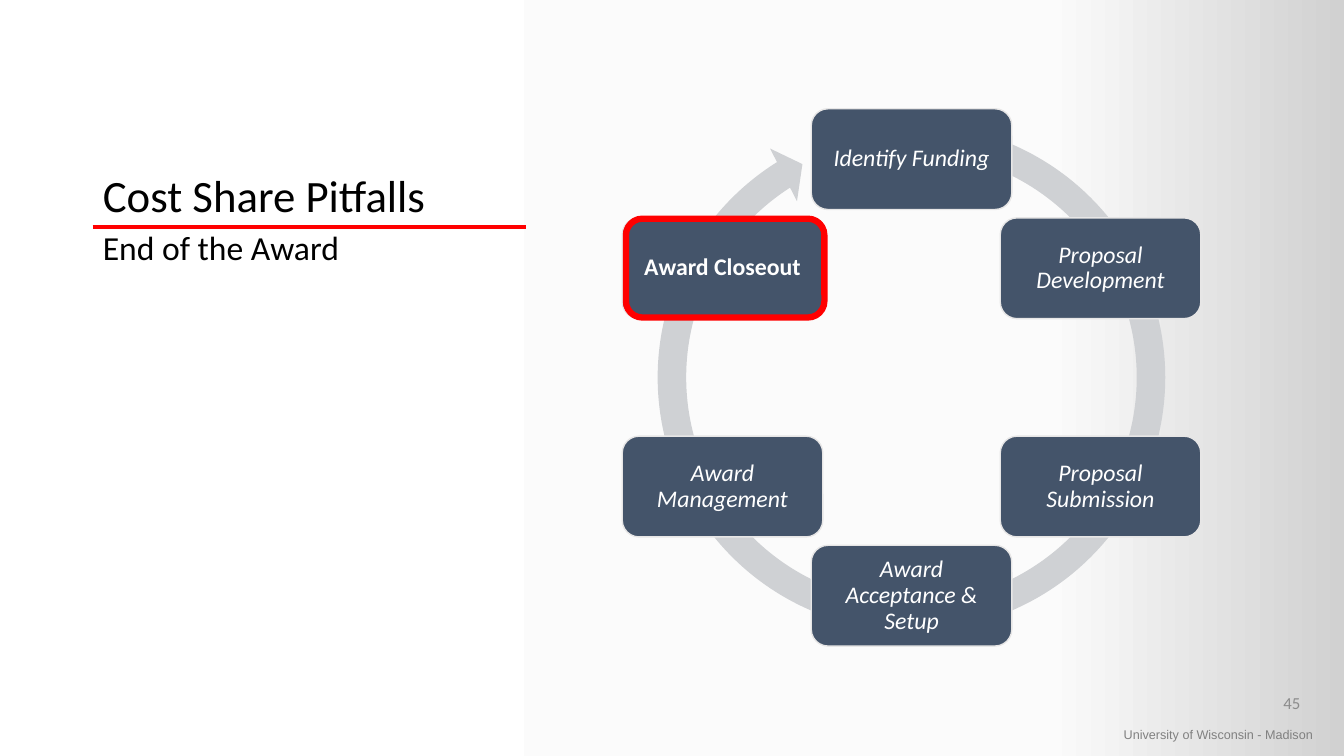
from copy import deepcopy
from math import cos, radians, sin

from pptx import Presentation
from pptx.dml.color import RGBColor
from pptx.enum.shapes import MSO_CONNECTOR, MSO_SHAPE
from pptx.enum.text import MSO_ANCHOR, MSO_AUTO_SIZE, PP_ALIGN
from pptx.oxml.ns import qn
from pptx.util import Pt

LEFT, CENTER, RIGHT = PP_ALIGN.LEFT, PP_ALIGN.CENTER, PP_ALIGN.RIGHT
TOP, MIDDLE, BOTTOM = MSO_ANCHOR.TOP, MSO_ANCHOR.MIDDLE, MSO_ANCHOR.BOTTOM
ROUNDED, RING = MSO_SHAPE.ROUNDED_RECTANGLE, MSO_SHAPE.CIRCULAR_ARROW

BLACK = RGBColor(0x00, 0x00, 0x00)
WHITE = RGBColor(0xFF, 0xFF, 0xFF)
RED = RGBColor(0xFF, 0x00, 0x00)
SLATE = RGBColor(0x44, 0x54, 0x6A)
CARD_EDGE = RGBColor(0xE7, 0xE6, 0xE6)
RING_GRAY = RGBColor(0xCF, 0xD1, 0xD4)
NUMBER_GRAY = RGBColor(0x8C, 0x8C, 0x8C)
FOOTER_GRAY = RGBColor(0x80, 0x80, 0x80)

# Content
TITLE = "Cost Share Pitfalls"
SUBTITLE = "End of the Award"
STAGES = [  # clockwise from the top
    "Identify Funding",
    "Proposal Development",
    "Proposal Submission",
    "Award Acceptance & Setup",
    "Award Management",
    "Award Closeout",
]
CURRENT_STAGE = "Award Closeout"
PAGE_NUMBER = "45"
FOOTER = "University of Wisconsin - Madison"
BACKGROUND = [(0, WHITE), (0.78, RGBColor(0xFB, 0xFB, 0xFB)),
              (1, RGBColor(0xD1, 0xD1, 0xD1))]

# Layout in points
SLIDE_W, SLIDE_H = 960, 540
TEXT_LEFT, TEXT_W, RULE_Y = 66.25, 309.5, 162
CYCLE_X, CYCLE_Y, CYCLE_RADIUS = 651.1, 269.6, 155.9
CARD_W, CARD_H, CARD_INSET = 143.3, 72, 8.6
RING_SIZE = 384.5
RING_ADJUSTMENTS = [0.053, 3.126, 142.629, 171.067, 0.055]


def write(shape, text, size, color, align=LEFT, anchor=TOP, font="Calibri",
          spacing=None, italic=False, bold=False):
    frame = shape.text_frame
    frame.word_wrap = True
    frame.auto_size = MSO_AUTO_SIZE.NONE
    frame.vertical_anchor = anchor
    para = frame.paragraphs[0]
    para.alignment = align
    para.space_before = Pt(0)
    if spacing:
        para.line_spacing = spacing
    span = para.add_run()
    span.text = text
    span.font.name, span.font.size = font, Pt(size)
    span.font.italic, span.font.bold = italic, bold
    span.font.color.rgb = color
    return para


def add_shape(kind, left, top, width, height, fill=None, edge=None, weight=1):
    shape = page.shapes.add_shape(kind, Pt(left), Pt(top), Pt(width), Pt(height))
    shape.shadow.inherit = False
    if fill is None:
        shape.fill.background()
    else:
        shape.fill.solid()
        shape.fill.fore_color.rgb = fill
    if edge is None:
        shape.line.fill.background()
    else:
        shape.line.color.rgb = edge
        shape.line.width = Pt(weight)
    return shape


def place(shape, left, top, width, height):
    shape.left, shape.top = Pt(left), Pt(top)
    shape.width, shape.height = Pt(width), Pt(height)


deck = Presentation()
deck.slide_width, deck.slide_height = Pt(SLIDE_W), Pt(SLIDE_H)
page = deck.slides.add_slide(deck.slide_layouts[1])

# Background gradient with a middle stop
fill = page.background.fill
fill.gradient()
fill.gradient_angle = 0
stop_list = next(page.element.iter(qn("a:gsLst")))
stop_list.insert(1, deepcopy(stop_list[0]))
for stop, (position, color) in zip(fill.gradient_stops, BACKGROUND):
    stop.position = position
    stop.color.rgb = color

# Title, rule and subtitle
rule = page.shapes.add_connector(MSO_CONNECTOR.STRAIGHT, Pt(TEXT_LEFT), Pt(RULE_Y),
                                 Pt(TEXT_LEFT + TEXT_W), Pt(RULE_Y))
rule.line.color.rgb = RED
rule.line.width = Pt(3)
properties = rule.element.spPr
properties.append(properties.makeelement(qn("a:effectLst"), {}))

title = page.shapes.title
place(title, TEXT_LEFT, 36, TEXT_W, RULE_Y - 36)
write(title, TITLE, 32, BLACK, anchor=BOTTOM, spacing=0.9)

body = page.placeholders[1]
place(body, TEXT_LEFT, RULE_Y, TEXT_W, 300)
para = write(body, SUBTITLE, 24, BLACK, spacing=0.9)
settings = para._p.get_or_add_pPr()
settings.set("marL", "0")
settings.set("indent", "0")
settings.append(settings.makeelement(qn("a:buNone"), {}))

# Ring arrow behind the award stages
ring = add_shape(RING, CYCLE_X - RING_SIZE / 2, CYCLE_Y - RING_SIZE / 2,
                 RING_SIZE, RING_SIZE, RING_GRAY)
for index, value in enumerate(RING_ADJUSTMENTS):
    ring.adjustments[index] = value

# Stage cards, evenly spaced around the ring
for index, stage in enumerate(STAGES):
    angle = radians(360 / len(STAGES) * index)
    left = CYCLE_X + CYCLE_RADIUS * sin(angle) - CARD_W / 2
    top = CYCLE_Y - CYCLE_RADIUS * cos(angle) - CARD_H / 2
    card = add_shape(ROUNDED, left, top, CARD_W, CARD_H, SLATE, CARD_EDGE)
    frame = card.text_frame
    frame.margin_left = frame.margin_right = Pt(CARD_INSET)
    frame.margin_top = frame.margin_bottom = Pt(CARD_INSET)
    current = stage == CURRENT_STAGE
    write(card, stage, 17, WHITE, CENTER, MIDDLE, spacing=0.9,
          italic=not current, bold=current)

# Highlight around the current stage
add_shape(ROUNDED, 447.1, 156.2, 141.8, 70.6, edge=RED, weight=4.5)

# Page number and footer
number = page.shapes.add_textbox(Pt(720), Pt(487.5), Pt(216), Pt(28.75))
write(number, PAGE_NUMBER, 12, NUMBER_GRAY, RIGHT, MIDDLE)
footer = page.shapes.add_textbox(Pt(795.6), Pt(515.5), Pt(164), Pt(18))
write(footer, FOOTER, 9, FOOTER_GRAY, font="Arial")

deck.save("out.pptx")
